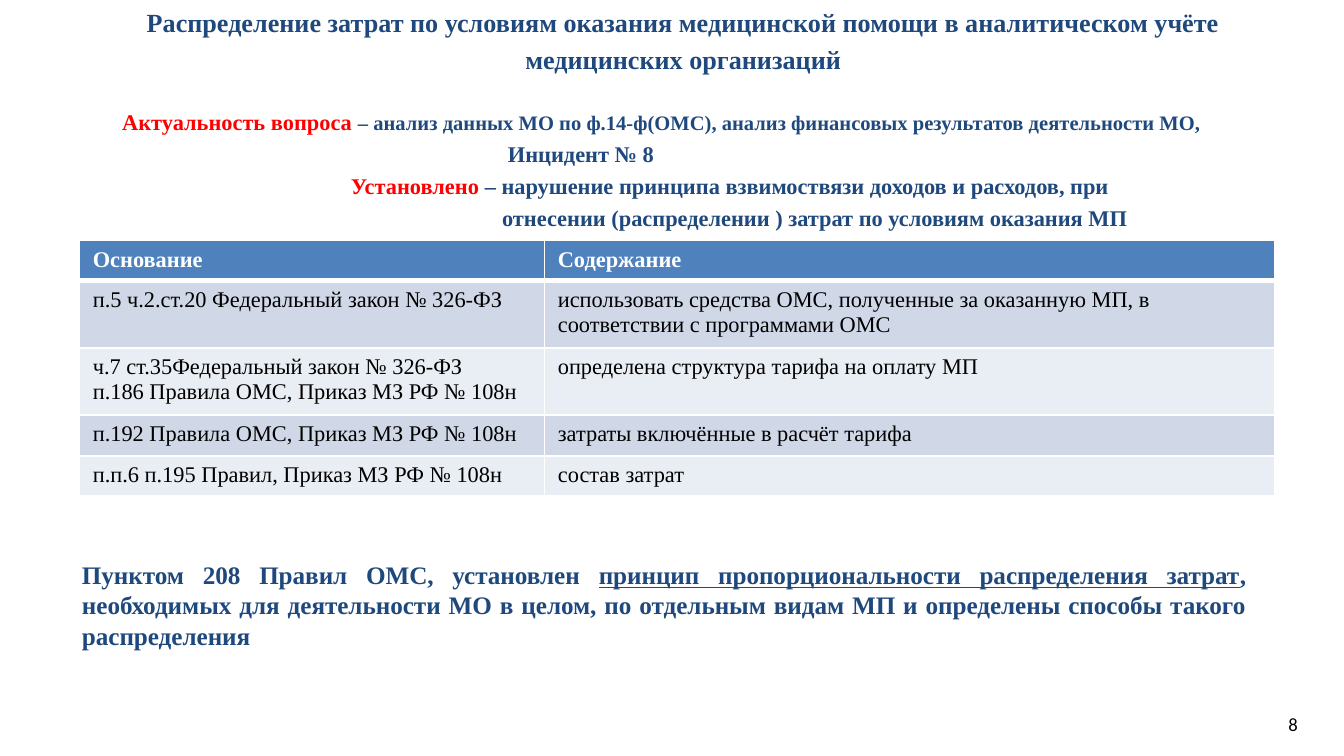
from dataclasses import dataclass

from lxml.etree import SubElement
from pptx import Presentation
from pptx.dml.color import RGBColor
from pptx.enum.text import MSO_ANCHOR, MSO_AUTO_SIZE, PP_ALIGN
from pptx.oxml.ns import qn
from pptx.util import Cm, Pt


@dataclass(frozen=True)
class Theme:
    serif: str = "Times New Roman"
    sans: str = "Calibri"
    navy: str = "1F497D"
    red: str = "FF0000"
    black: str = "000000"
    white: str = "FFFFFF"
    header: str = "4F81BD"
    bands: tuple = ("D0D8E8", "E9EDF4")
    title_size: float = 14
    text_size: float = 12
    detail_size: float = 11
    conclusion_size: float = 13.5
    number_size: float = 10
    line_spacing: float = 1.19


theme = Theme()


def add_span(para, text, size, color, font=theme.serif, bold=True, underline=False):
    span = para.add_run()
    span.text = text
    formats = {"name": font, "size": Pt(size), "bold": bold, "underline": underline}
    for name, value in formats.items():
        setattr(span.font, name, value)
    span.font.color.rgb = RGBColor.from_string(color)


def set_frame(box, left, top, width, height):
    box.left, box.top, box.width, box.height = Cm(left), Cm(top), Cm(width), Cm(height)
    formats = {
        "margin_left": 0, "margin_top": 0, "margin_right": 0, "margin_bottom": 0,
        "word_wrap": True, "auto_size": MSO_AUTO_SIZE.NONE,
        "vertical_anchor": MSO_ANCHOR.TOP,
    }
    for name, value in formats.items():
        setattr(box.text_frame, name, value)
    return box.text_frame


deck = Presentation()
deck.slide_width, deck.slide_height = Cm(25.4), Cm(14.28)
page = deck.slides.add_slide(deck.slide_layouts[5])

# Title
frame = set_frame(page.shapes.title, 2.31, 0, 21.21, 1.37)
para = frame.paragraphs[0]
para.alignment, para.line_spacing = PP_ALIGN.CENTER, theme.line_spacing
add_span(para, "Распределение затрат по условиям оказания медицинской помощи "
         "в аналитическом учёте медицинских организаций", theme.title_size, theme.navy)

# Relevance and findings: left indent in cm, then spans of text, size and colour
findings = [
    (0, [("Актуальность вопроса ", theme.text_size, theme.red),
         ("– анализ данных МО по ф.14-ф(ОМС), анализ финансовых результатов "
          "деятельности МО,", theme.detail_size, theme.navy)]),
    (7.29, [("Инцидент № 8", theme.text_size, theme.navy)]),
    (4.32, [("Установлено ", theme.text_size, theme.red),
            ("– нарушение принципа взвимоствязи доходов и расходов, при",
             theme.text_size, theme.navy)]),
    (7.18, [("отнесении (распределении ) затрат по условиям оказания МП",
             theme.text_size, theme.navy)]),
]
frame = set_frame(page.shapes.add_textbox(0, 0, 0, 0), 2.31, 1.95, 21.21, 2.4)
for index, (indent, spans) in enumerate(findings):
    para = frame.add_paragraph() if index else frame.paragraphs[0]
    para.line_spacing = theme.line_spacing
    para._p.get_or_add_pPr().set("marL", str(Cm(indent)))
    for text, size, color in spans:
        add_span(para, text, size, color)

# Table of legal grounds
rows = [
    ("Основание", "Содержание"),
    ("п.5 ч.2.ст.20 Федеральный закон № 326-ФЗ",
     "использовать средства ОМС, полученные за оказанную МП, "
     "в соответствии с программами ОМС"),
    ("ч.7 ст.35Федеральный закон № 326-ФЗ\nп.186 Правила ОМС, Приказ МЗ РФ № 108н",
     "определена структура тарифа на оплату МП"),
    ("п.192 Правила ОМС, Приказ МЗ РФ № 108н", "затраты включённые в расчёт тарифа"),
    ("п.п.6 п.195 Правил, Приказ МЗ РФ № 108н", "состав затрат"),
]
column_widths = (8.79, 13.8)
row_heights = (0.76, 1.27, 1.27, 0.77, 0.76)
table = page.shapes.add_table(
    len(rows), 2, Cm(1.5), Cm(4.54), Cm(sum(column_widths)), Cm(sum(row_heights))).table
for column, width in zip(table.columns, column_widths):
    column.width = Cm(width)
for row_index, (texts, height) in enumerate(zip(rows, row_heights)):
    table.rows[row_index].height = Cm(height)
    is_header = row_index == 0
    fill = theme.header if is_header else theme.bands[(row_index - 1) % 2]
    for column_index, text in enumerate(texts):
        cell = table.cell(row_index, column_index)
        for index, line in enumerate(text.split("\n")):
            frame = cell.text_frame
            para = frame.add_paragraph() if index else frame.paragraphs[0]
            add_span(para, line, theme.text_size,
                     theme.white if is_header else theme.black, bold=is_header)
        # Borders come before the fill in the cell properties
        properties = cell._tc.get_or_add_tcPr()
        for side in ("lnL", "lnR", "lnT", "lnB"):
            thick = (is_header and side == "lnB") or (row_index == 1 and side == "lnT")
            border = SubElement(properties, qn(f"a:{side}"), w=str(Pt(3 if thick else 1)))
            SubElement(SubElement(border, qn("a:solidFill")), qn("a:srgbClr"), val=theme.white)
        cell.fill.solid()
        cell.fill.fore_color.rgb = RGBColor.from_string(fill)

# Conclusion
frame = set_frame(page.shapes.add_textbox(0, 0, 0, 0), 1.55, 10.57, 22.0, 1.7)
para = frame.paragraphs[0]
para.alignment = PP_ALIGN.JUSTIFY
for text, underline in (
    ("Пунктом 208 Правил ОМС, установлен ", False),
    ("принцип пропорциональности распределения затрат", True),
    (", необходимых для деятельности МО в целом, по отдельным видам МП "
     "и определены способы такого распределения", False),
):
    add_span(para, text, theme.conclusion_size, theme.navy, underline=underline)

# Page number
frame = set_frame(page.shapes.add_textbox(0, 0, 0, 0), 24.35, 13.46, 0.7, 0.45)
add_span(frame.paragraphs[0], "8", theme.number_size, theme.black, theme.sans, bold=False)

deck.save("out.pptx")
